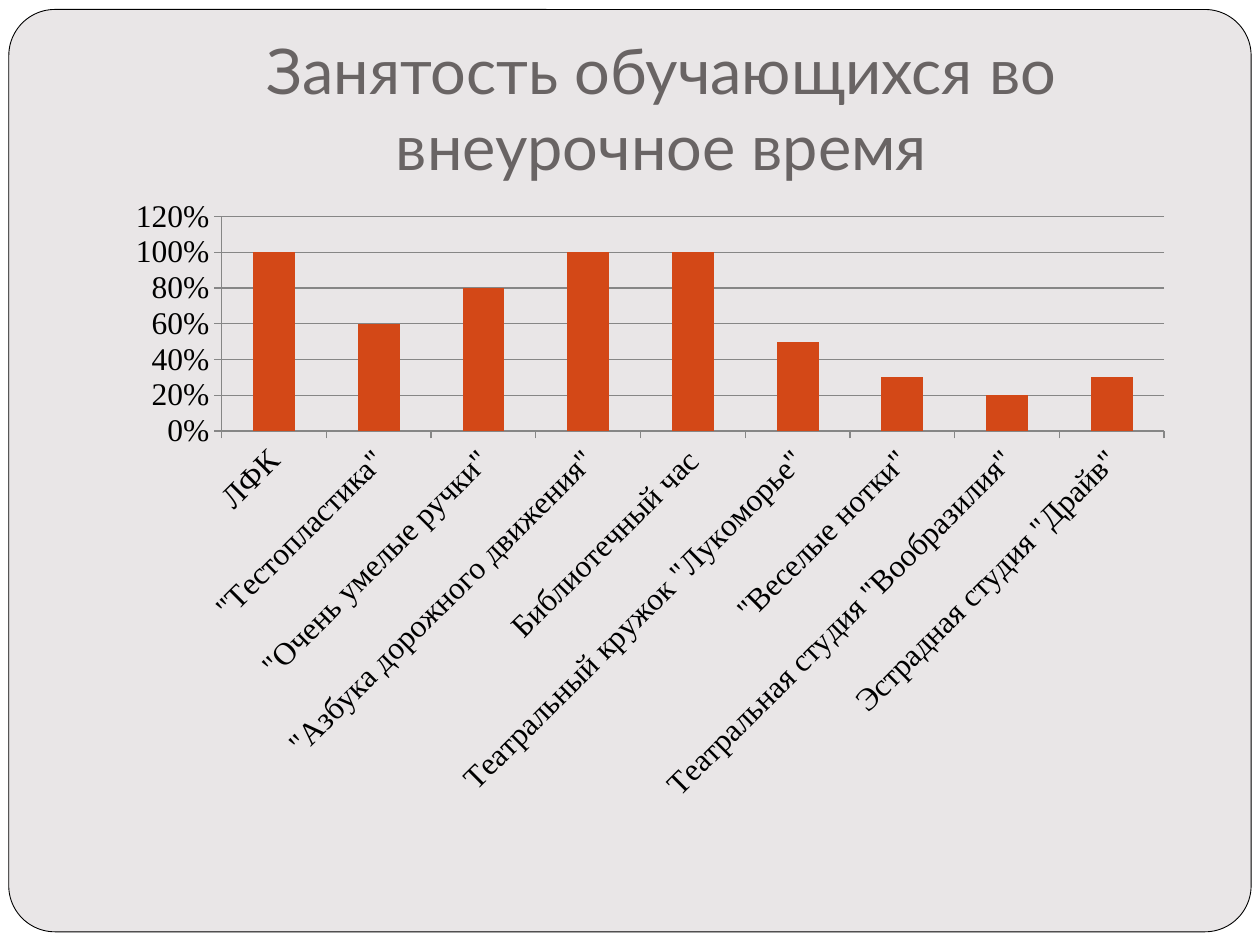
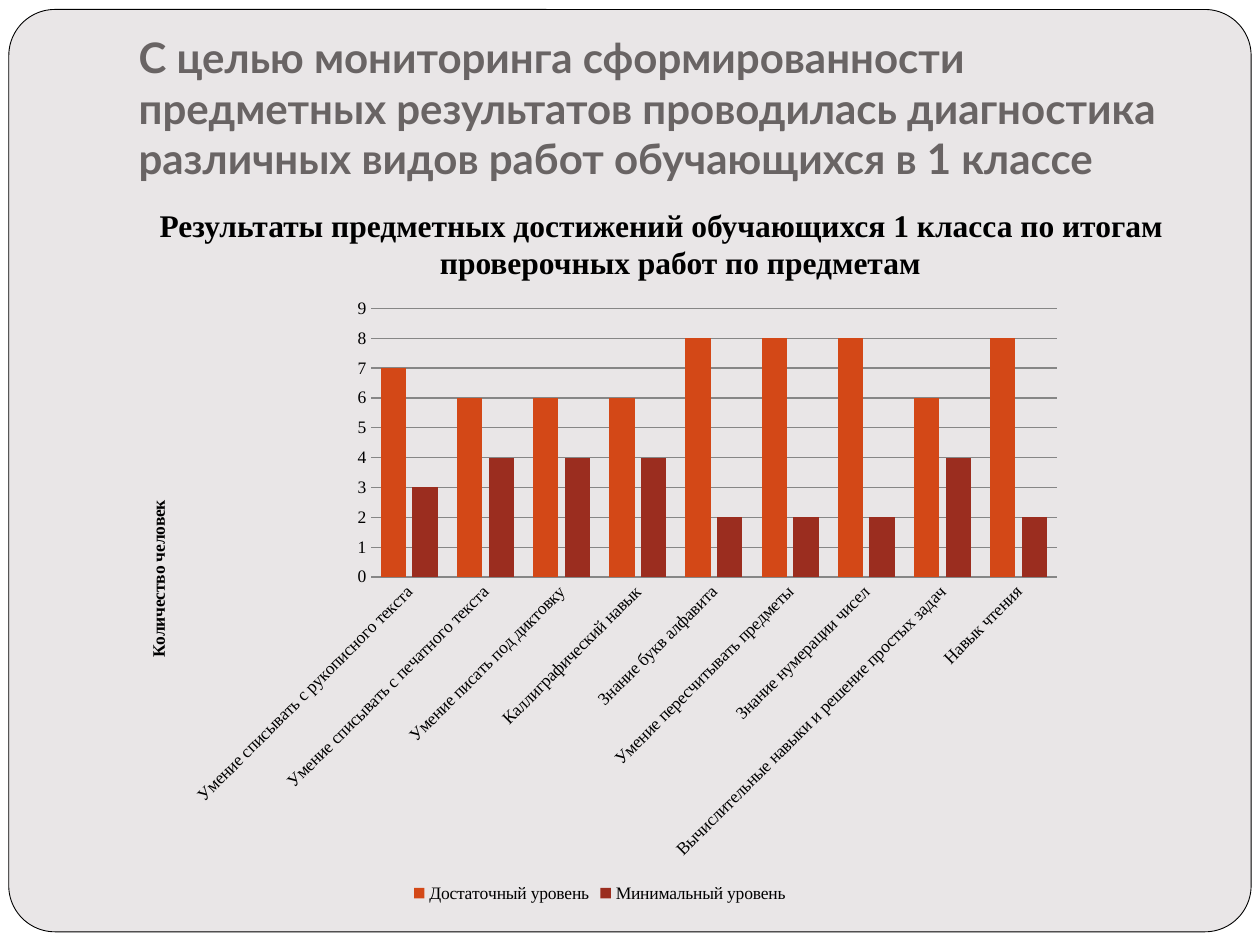
from lxml import etree
from pptx import Presentation
from pptx import util as u
from pptx.chart.data import CategoryChartData
from pptx.dml.color import RGBColor
from pptx.enum import chart as ch, shapes, text
from pptx.oxml import parse_xml
from pptx.oxml.ns import nsdecls

WHITE = RGBColor(0xFF, 0xFF, 0xFF)
BLACK = RGBColor(0, 0, 0)
PANEL = RGBColor(0xE9, 0xE6, 0xE7)
TITLE = RGBColor(0x69, 0x64, 0x64)
GRID = RGBColor(0x86, 0x86, 0x86)
ORANGE = RGBColor(0xD3, 0x48, 0x17)
BRICK = RGBColor(0x9B, 0x2D, 0x1F)
HEAD_FONT, BODY_FONT = "Lato", "Times New Roman"

prs = Presentation()
prs.slide_width, prs.slide_height = u.Inches(10), u.Inches(7.5)
W, H = prs.slide_width, prs.slide_height


def box(left, top, width, height):
    return int(left * W), int(top * H), int(width * W), int(height * H)


def style(p, name, size, color, bold, align):
    p.font.name, p.font.size, p.font.bold = name, u.Pt(size), bold
    p.font.color.rgb = color
    p.alignment = align


pages = [
    dict(
        title="Занятость обучающихся во внеурочное время",
        size=36, bold=False, align=text.PP_ALIGN.CENTER,
        area=(0.091, 0.196, 0.85, 0.667), plot=(0.1, 0.05, 0.88, 0.34),
        font=18, gap=150, overlap=0, top=1.2, step=0.2, fmt="0%",
        tick=ch.XL_TICK_MARK.OUTSIDE,
        cats=["ЛФК", '"Тестопластика"', '"Очень умелые ручки"',
              '"Азбука дорожного движения"', "Библиотечный час",
              'Театральный кружок "Лукоморье"', '"Веселые нотки"',
              'Театральная студия "Вообразилия"', 'Эстрадная студия "Драйв"'],
        series=[("Series 1", ORANGE, [1, 0.6, 0.8, 1, 1, 0.5, 0.3, 0.2, 0.3])],
    ),
    dict(
        title="С целью мониторинга сформированности предметных результатов "
              "проводилась диагностика различных видов работ обучающихся в 1 классе",
        size=24, bold=True, align=text.PP_ALIGN.LEFT,
        body="Результаты предметных достижений обучающихся 1 класса по итогам "
             "проверочных работ по предметам",
        area=(0.098, 0.3, 0.756, 0.661), plot=(0.26, 0.04, 0.72, 0.43),
        font=10, gap=75, overlap=-25, top=9, step=1, fmt="General",
        tick=ch.XL_TICK_MARK.NONE, axis_title="Количество человек",
        cats=["Умение списывать с рукописного текста",
              "Умение списывать с печатного текста",
              "Умение писать под диктовку", "Каллиграфический навык",
              "Знание букв алфавита", "Умение пересчитывать предметы",
              "Знание нумерации чисел",
              "Вычислительные навыки и решение простых задач", "Навык чтения"],
        series=[("Достаточный уровень", ORANGE, [7, 6, 6, 6, 8, 8, 8, 6, 8]),
                ("Минимальный уровень", BRICK, [3, 4, 4, 4, 2, 2, 2, 4, 2])],
    ),
]

for page in pages:
    s = prs.slides.add_slide(prs.slide_layouts[5])
    s.background.fill.solid()
    s.background.fill.fore_color.rgb = WHITE

    panel = s.shapes.add_shape(shapes.MSO_SHAPE.ROUNDED_RECTANGLE,
                               *box(0.007, 0.01, 0.986, 0.976))
    panel.adjustments[0] = 0.05
    panel.shadow.inherit = False
    panel.fill.solid()
    panel.fill.fore_color.rgb = PANEL
    panel.line.color.rgb = BLACK
    panel.line.width = u.Pt(0.5)
    s.shapes.title.element.addprevious(panel.element)

    title = s.shapes.title
    title.left, title.top, title.width, title.height = box(0.1, 0.04, 0.85, 0.167)
    tf = title.text_frame
    tf.text = page["title"]
    tf.word_wrap = True
    tf.auto_size = text.MSO_AUTO_SIZE.NONE
    tf.vertical_anchor = text.MSO_ANCHOR.BOTTOM
    tf.margin_bottom = u.Inches(0.1)
    style(tf.paragraphs[0], HEAD_FONT, page["size"], TITLE, page["bold"], page["align"])

    if "body" in page:
        tf = s.shapes.add_textbox(*box(0.1, 0.211, 0.85, 0.667)).text_frame
        tf.word_wrap = True
        p = tf.paragraphs[0]
        p.text = page["body"]
        p.space_before = u.Pt(5.8)
        style(p, BODY_FONT, 18, BLACK, True, text.PP_ALIGN.CENTER)
        pPr = p._p.get_or_add_pPr()
        pPr.set("marL", str(u.Inches(0.3)))
        pPr.set("indent", str(-u.Inches(0.3)))

    data = CategoryChartData(number_format=page["fmt"])
    data.categories = page["cats"]
    for name, color, values in page["series"]:
        data.add_series(name, values)
    chart = s.shapes.add_chart(ch.XL_CHART_TYPE.COLUMN_CLUSTERED,
                               *box(*page["area"]), data).chart
    chart.has_title = False
    chart.font.name, chart.font.size = BODY_FONT, u.Pt(page["font"])
    chart.font.color.rgb = BLACK

    plot = chart.plots[0]
    plot.gap_width, plot.overlap = page["gap"], page["overlap"]
    plot.vary_by_categories = False
    for series, (name, color, values) in zip(plot.series, page["series"]):
        series.format.fill.solid()
        series.format.fill.fore_color.rgb = color
        series.invert_if_negative = False

    cat_axis, val_axis = chart.category_axis, chart.value_axis
    val_axis.minimum_scale, val_axis.maximum_scale = 0, page["top"]
    val_axis.major_unit = page["step"]
    val_axis.has_major_gridlines = True
    val_axis.tick_labels.number_format = page["fmt"]
    val_axis.tick_labels.number_format_is_linked = False
    for axis in (cat_axis, val_axis):
        axis.major_tick_mark = page["tick"]
        axis.minor_tick_mark = ch.XL_TICK_MARK.NONE
        axis.tick_labels.font.size = u.Pt(page["font"])
    for line in (cat_axis.format.line, val_axis.format.line,
                 val_axis.major_gridlines.format.line):
        line.color.rgb = GRID
        line.width = u.Pt(0.75)

    chart.has_legend = len(page["series"]) > 1
    if chart.has_legend:
        chart.legend.position = ch.XL_LEGEND_POSITION.BOTTOM
        chart.legend.include_in_layout = False
    if "axis_title" in page:
        val_axis.format.line.fill.background()
        tf = val_axis.axis_title.text_frame
        tf.text = page["axis_title"]
        style(tf.paragraphs[0], BODY_FONT, page["font"], BLACK, True, text.PP_ALIGN.CENTER)

    chart.element.xpath(".//c:catAx/c:txPr/a:bodyPr")[0].set("rot", str(-45 * 60000))
    plot_area = chart.element.xpath(".//c:plotArea")[0]
    for old in plot_area.xpath("./c:layout"):
        plot_area.remove(old)
    layout = parse_xml(f"<c:layout {nsdecls('c')}><c:manualLayout/></c:layout>")
    settings = [("layoutTarget", "inner"), ("xMode", "edge"), ("yMode", "edge")]
    for tag, value in settings + list(zip("xywh", page["plot"])):
        etree.SubElement(layout[0], f"{{{layout.nsmap['c']}}}{tag}", val=str(value))
    plot_area.insert(0, layout)

prs.save("out.pptx")
